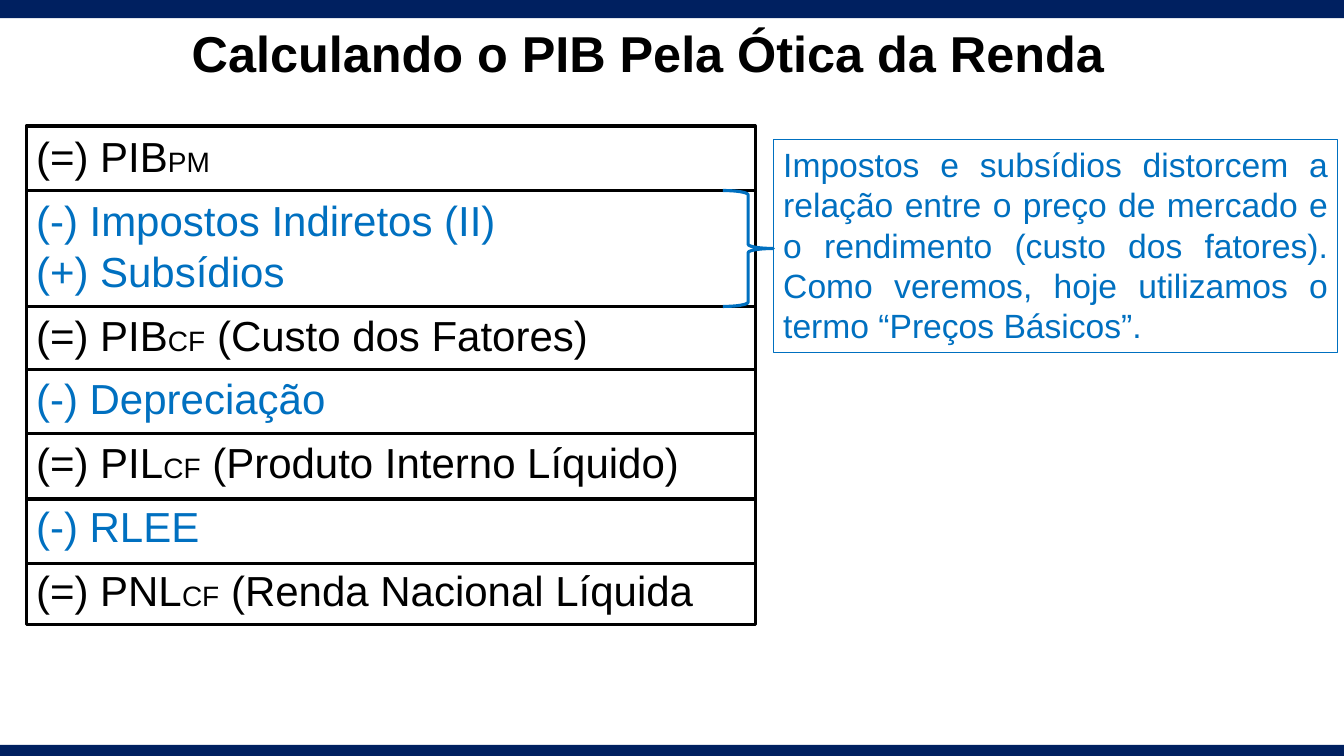
import pptx
import pptx.util
import pptx.dml.color
import pptx.enum.shapes
import pptx.enum.text
import pptx.oxml.ns
import lxml.etree

Inches, Pt = pptx.util.Inches, pptx.util.Pt
SHAPE = pptx.enum.shapes.MSO_SHAPE
ALIGN = pptx.enum.text.PP_ALIGN
ANCHOR = pptx.enum.text.MSO_ANCHOR
NAVY, BLUE, BLACK = "002060", "0070C0", "000000"


def rgb(value):
    return pptx.dml.color.RGBColor.from_string(value)


class Deck:
    font = "Arial"

    def __init__(self, width, height):
        self.prs = pptx.Presentation()
        self.prs.slide_width = Inches(width)
        self.prs.slide_height = Inches(height)
        self.s = self.prs.slides.add_slide(self.prs.slide_layouts[5])

    def style(self, font, size, color, bold=False):
        font.name, font.size, font.bold = self.font, Pt(size), bold
        font.color.rgb = rgb(color)

    def title(self, text, x, y, w, h):
        sp = self.s.shapes.title
        sp.left, sp.top, sp.width, sp.height = map(Inches, (x, y, w, h))
        tf = sp.text_frame
        tf.text = text
        tf.vertical_anchor = ANCHOR.MIDDLE
        p = tf.paragraphs[0]
        p.alignment = ALIGN.CENTER
        self.style(p.font, 36, BLACK, bold=True)

    def shape(self, kind, x, y, w, h, fill=None, line=None, weight=1):
        sp = self.s.shapes.add_shape(kind, *map(Inches, (x, y, w, h)))
        sp.shadow.inherit = False
        if fill:
            sp.fill.solid()
            sp.fill.fore_color.rgb = rgb(fill)
        else:
            sp.fill.background()
        if line:
            sp.line.color.rgb = rgb(line)
            sp.line.width = Pt(weight)
        else:
            sp.line.fill.background()
        return sp

    def text(self, sp, lines, size, align=ALIGN.LEFT):
        """Fill sp with lines of (runs, colour, space before); every second run is small."""
        tf = sp.text_frame
        tf.word_wrap = True
        tf.vertical_anchor = ANCHOR.TOP
        for i, (runs, color, gap) in enumerate(lines):
            p = tf.add_paragraph() if i else tf.paragraphs[0]
            p.alignment = align
            p.space_before = Pt(gap)
            self.style(p.font, size, color)
            for j, part in enumerate(runs):
                r = p.add_run()
                r.text = part
                if j % 2:
                    r.font.size = Pt(20)

    def rule(self, x1, x2, y):
        line = self.s.shapes.add_connector(
            pptx.enum.shapes.MSO_CONNECTOR.STRAIGHT,
            Inches(x1), Inches(y), Inches(x2), Inches(y))
        line.line.color.rgb = rgb(BLACK)
        line.line.width = Pt(2.25)
        lxml.etree.SubElement(line._element.spPr, pptx.oxml.ns.qn("a:effectLst"))


def main():
    deck = Deck(13.33, 7.5)
    for y, h in ((0, 0.18), (7.39, 0.11)):
        deck.shape(SHAPE.RECTANGLE, 0, y, 13.33, h, fill=NAVY)
    deck.title("Calculando o PIB Pela Ótica da Renda", 1.5, 0.17, 9.86, 0.7)

    gap = 9.6
    accounts = [
        (["(=) PIB", "PM"], BLACK, 0),
        (["(-) Impostos Indiretos (II)"], BLUE, gap),
        (["(+) Subsídios"], BLUE, 0),
        (["(=) PIB", "CF", " (Custo dos Fatores)"], BLACK, gap),
        (["(-) Depreciação"], BLUE, gap),
        (["(=) PIL", "CF", " (Produto Interno Líquido)"], BLACK, gap),
        (["(-) RLEE"], BLUE, gap),
        (["(=) PNL", "CF", " (Renda Nacional Líquida"], BLACK, gap),
    ]
    box = deck.shape(SHAPE.RECTANGLE, 0.26, 1.25, 7.23, 4.95, line=BLACK, weight=2.25)
    deck.text(box, accounts, 30)
    for y in (1.89, 3.04, 3.67, 4.3, 4.95, 5.59):
        deck.rule(0.26, 7.48, y)

    note = deck.shape(SHAPE.RECTANGLE, 7.67, 1.38, 5.6, 2.12, line=BLUE, weight=0.75)
    deck.text(note, [(["Impostos e subsídios distorcem a relação entre o preço de mercado "
                       "e o rendimento (custo dos fatores). Como veremos, hoje utilizamos "
                       "o termo “Preços Básicos”."], BLUE, 0)], 24, ALIGN.JUSTIFY)
    deck.shape(SHAPE.RIGHT_BRACE, 7.17, 1.89, 0.5, 1.15, line=BLUE, weight=2.25)
    deck.prs.save("out.pptx")


if __name__ == "__main__":
    main()
